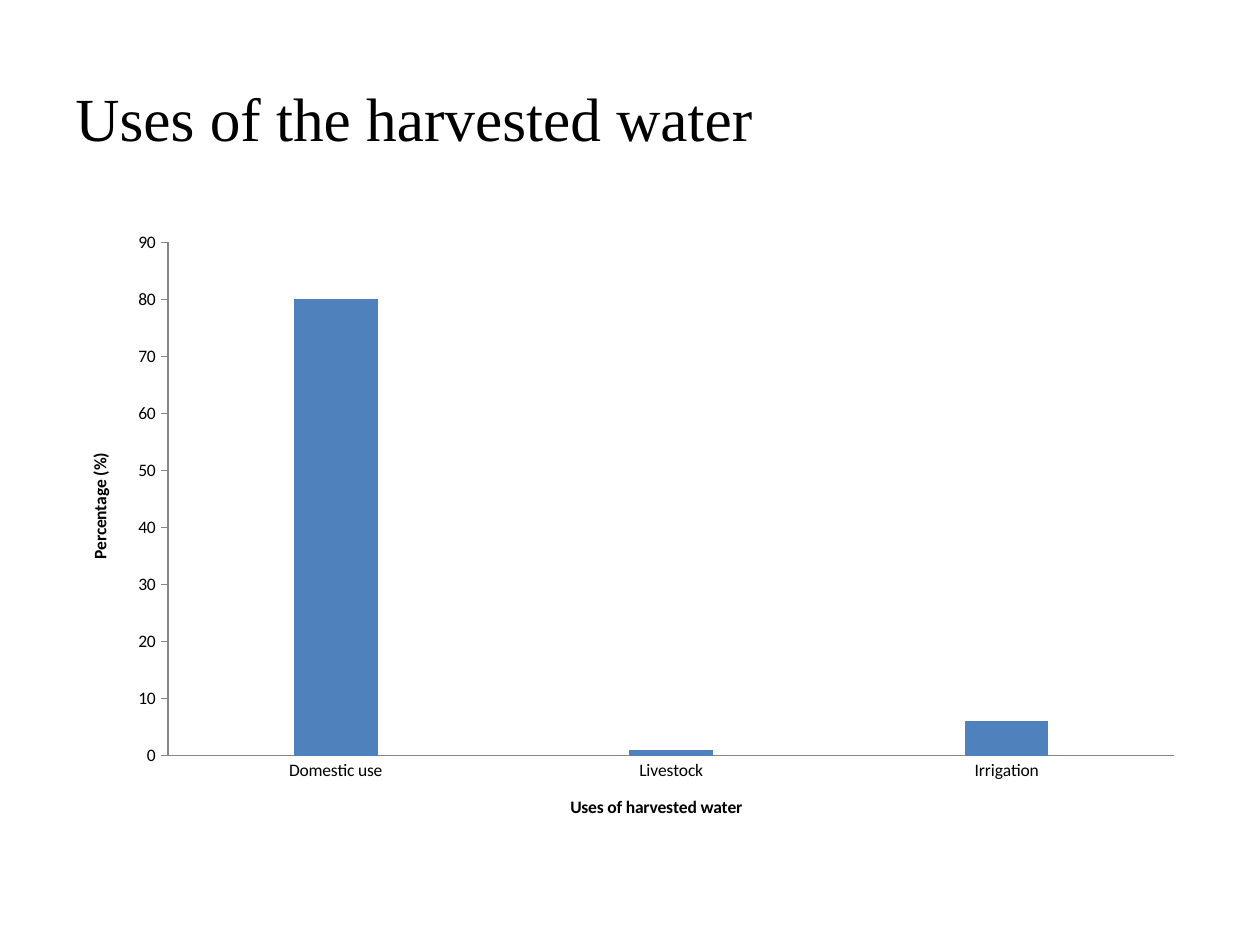
from dataclasses import dataclass

from pptx import Presentation
from pptx.chart.data import CategoryChartData
from pptx.dml.color import RGBColor
from pptx.enum.chart import XL_CHART_TYPE, XL_TICK_MARK
from pptx.enum.text import MSO_ANCHOR, PP_ALIGN
from pptx.util import Emu, Pt


@dataclass(frozen=True)
class Theme:
    """Fonts, type sizes and colours of the slide."""
    title_font: str = "Times New Roman"
    chart_font: str = "Calibri"
    title_size: int = 35
    chart_size: int = 10
    text: str = "000000"
    bar: str = "4F81BD"
    axis: str = "868686"


THEME = Theme()
PX_PER_INCH = 126
USES = {"Domestic use": 80, "Livestock": 1, "Irrigation": 6}


def px(length):
    """Turn whole pixels into EMU."""
    return Emu(round(length * 914400 / PX_PER_INCH))


def style_font(font, name, size, bold=False):
    """Apply a typeface, size, weight and the text colour."""
    font.name = name
    font.size = Pt(size)
    font.bold = bold
    font.color.rgb = RGBColor.from_string(THEME.text)


def add_title(slide, text, left, top, width, height):
    """Add the left-aligned slide heading."""
    shape = slide.shapes.add_textbox(px(left), px(top), px(width), px(height))
    text_frame = shape.text_frame
    text_frame.word_wrap = True
    text_frame.vertical_anchor = MSO_ANCHOR.MIDDLE
    text_frame.text = text
    paragraph = text_frame.paragraphs[0]
    paragraph.alignment = PP_ALIGN.LEFT
    style_font(paragraph.runs[0].font, THEME.title_font, THEME.title_size)


def style_axis(axis, title, tick_mark):
    """Give an axis its title, line and tick marks."""
    axis.has_major_gridlines = False
    axis.major_tick_mark = tick_mark
    axis.minor_tick_mark = XL_TICK_MARK.NONE
    axis.format.line.color.rgb = RGBColor.from_string(THEME.axis)
    axis.format.line.width = Pt(0.75)
    text_frame = axis.axis_title.text_frame
    text_frame.text = title
    font = text_frame.paragraphs[0].runs[0].font
    style_font(font, THEME.chart_font, THEME.chart_size, bold=True)


def add_column_chart(slide, values, left, top, width, height):
    """Add the column chart of water uses."""
    data = CategoryChartData()
    data.categories = list(values)
    data.add_series("Series 1", list(values.values()))
    chart = slide.shapes.add_chart(
        XL_CHART_TYPE.COLUMN_CLUSTERED,
        px(left), px(top), px(width), px(height), data,
    ).chart
    chart.has_title = False
    chart.has_legend = False
    style_font(chart.font, THEME.chart_font, THEME.chart_size)
    style_axis(chart.category_axis, "Uses of harvested water", XL_TICK_MARK.NONE)
    style_axis(chart.value_axis, "Percentage (%)", XL_TICK_MARK.OUTSIDE)
    chart.value_axis.minimum_scale = 0
    chart.value_axis.maximum_scale = 90
    chart.value_axis.major_unit = 10
    plot = chart.plots[0]
    plot.gap_width = 300
    plot.vary_by_categories = False
    fill = plot.series[0].format.fill
    fill.solid()
    fill.fore_color.rgb = RGBColor.from_string(THEME.bar)


def main():
    """Build and save the slide."""
    presentation = Presentation()
    presentation.slide_width = px(1260)
    presentation.slide_height = px(945)
    slide = presentation.slides.add_slide(presentation.slide_layouts[6])
    add_title(slide, "Uses of the harvested water", 63, 38, 1134, 158)
    add_column_chart(slide, USES, 63, 220, 1134, 624)
    presentation.save("out.pptx")


if __name__ == "__main__":
    main()
